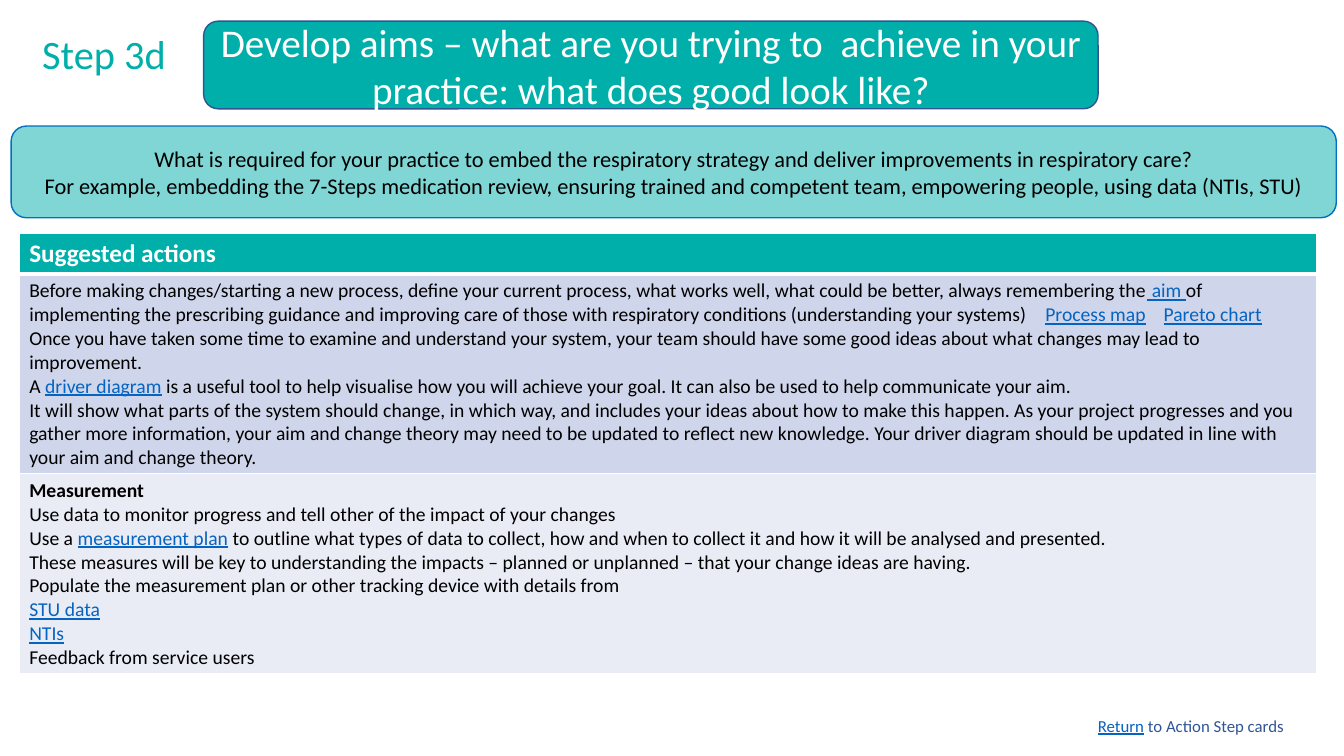
from lxml import etree
from pptx import Presentation
from pptx import util as u
from pptx.dml.color import RGBColor
from pptx.enum import shapes, text
from pptx.oxml.ns import qn

TEAL = RGBColor(0x00, 0xAF, 0xAA)
NAVY = RGBColor(0x32, 0x54, 0x91)
BLUE = RGBColor(0x00, 0x70, 0xC0)
LINK = RGBColor(0x05, 0x63, 0xC1)
INDIGO = RGBColor(0x2F, 0x55, 0x97)
LILAC = RGBColor(0xCF, 0xD5, 0xEA)
MIST = RGBColor(0xE9, 0xEB, 0xF5)
WHITE = RGBColor(0xFF, 0xFF, 0xFF)
BLACK = RGBColor(0x00, 0x00, 0x00)

CHANGES = [
    "Before making changes/starting a new process, define your current process, what works well, "
    "what could be better, always remembering the| aim |of implementing the prescribing guidance and "
    "improving care of those with respiratory conditions (understanding your systems)\t|Process map|\t|"
    "Pareto chart",
    "Once you have taken some time to examine and understand your system, your team should have some "
    "good ideas about what changes may lead to improvement.",
    "A |driver diagram| is a useful tool to help visualise how you will achieve your goal. "
    "It can also be used to help communicate your aim.",
    "It will show what parts of the system should change, in which way, and includes your ideas about "
    "how to make this happen. As your project progresses and you gather more information, your aim and "
    "change theory may need to be updated to reflect new knowledge. Your driver diagram should be "
    "updated in line with your aim and change theory.",
]
MEASUREMENT = [
    "Measurement",
    "Use data to monitor progress and tell other of the impact of your changes",
    "Use a |measurement plan| to outline what types of data to collect, how and when to collect it "
    "and how it will be analysed and presented.",
    "These measures will be key to understanding the impacts – planned or unplanned – that your "
    "change ideas are having.",
    "Populate the measurement plan or other tracking device with details from",
    "|STU data|",
    "|NTIs|",
    "Feedback from service users",
]


class Card:
    """Draws one action card on a grid of 100 columns by 100 rows; text between bars is a link."""

    font = "Calibri"

    def __init__(self, prs):
        self.col, self.row = prs.slide_width / 100, prs.slide_height / 100
        self.s = prs.slides.add_slide(prs.slide_layouts[6])

    def place(self, x, y, w, h):
        return [u.Emu(round(v)) for v in (x * self.col, y * self.row, w * self.col, h * self.row)]

    def fill_text(self, tf, lines, size, color, align=text.PP_ALIGN.LEFT, bold_first=False):
        tf.word_wrap = True
        for i, line in enumerate(lines):
            p = tf.paragraphs[0] if i == 0 else tf.add_paragraph()
            p.alignment = align
            for j, part in enumerate(line.split("|")):
                if not part:
                    continue
                r = p.add_run()
                r.text = part
                f = r.font
                f.name, f.size = self.font, u.Pt(size)
                f.bold = bold_first and i == 0
                f.underline = j % 2 == 1
                f.color.rgb = LINK if j % 2 else color

    def label(self, box, line, size, color, anchor=text.MSO_ANCHOR.TOP, spacing=1.0):
        tf = self.s.shapes.add_textbox(*self.place(*box)).text_frame
        tf.vertical_anchor = anchor
        self.fill_text(tf, [line], size, color)
        tf.paragraphs[0].line_spacing = spacing

    def panel(self, box, lines, size, color, border, opacity=100):
        sp = self.s.shapes.add_shape(shapes.MSO_SHAPE.ROUNDED_RECTANGLE, *self.place(*box))
        sp.shadow.inherit = False
        sp.fill.solid()
        sp.fill.fore_color.rgb = TEAL
        if opacity < 100:
            clr = sp._element.spPr.find(qn("a:solidFill"))[0]
            etree.SubElement(clr, qn("a:alpha"), val=str(opacity * 1000))
        sp.line.color.rgb, sp.line.width = border, u.Pt(1)
        sp.text_frame.vertical_anchor = text.MSO_ANCHOR.MIDDLE
        self.fill_text(sp.text_frame, lines, size, color, text.PP_ALIGN.CENTER)

    def borders(self, cell, bottom):
        tc_pr = cell._tc.get_or_add_tcPr()
        for i, (side, width) in enumerate(zip("LRTB", (1, 1, 1, bottom))):
            ln = etree.Element(qn(f"a:ln{side}"), w=str(u.Pt(width)))
            fill = etree.SubElement(ln, qn("a:solidFill"))
            etree.SubElement(fill, qn("a:srgbClr"), val=str(WHITE))
            tc_pr.insert(i, ln)

    def table(self, box, rows):
        tbl = self.s.shapes.add_table(len(rows), 1, *self.place(*box)).table
        for i, (height, fill, lines, size, color, bottom) in enumerate(rows):
            tbl.rows[i].height = round(height * self.row)
            cell = tbl.cell(i, 0)
            cell.fill.solid()
            cell.fill.fore_color.rgb = fill
            self.borders(cell, bottom)
            self.fill_text(cell.text_frame, lines, size, color, bold_first=lines is not CHANGES)
        return tbl

    def tabs(self, p, *stops):
        tab_lst = etree.SubElement(p._p.get_or_add_pPr(), qn("a:tabLst"))
        for stop in stops:
            etree.SubElement(tab_lst, qn("a:tab"), pos=str(round(stop * self.col)), algn="l")


def main():
    prs = Presentation()
    prs.slide_width, prs.slide_height = u.Inches(13.33), u.Inches(7.5)
    card = Card(prs)
    card.label((2.4, 2.8, 11.55, 9.2), "Step 3d", 28.8, TEAL, text.MSO_ANCHOR.MIDDLE, 0.9)
    card.panel((15.15, 2.8, 66.55, 11.6),
               ["Develop aims – what are you trying to  achieve in your practice: what does good look like?"],
               28, WHITE, NAVY)
    card.panel((0.83, 16.67, 98.6, 12.13),
               ["What is required for your practice to embed the respiratory strategy and deliver "
                "improvements in respiratory care?",
                "For example, embedding the 7-Steps medication review, ensuring trained and competent "
                "team, empowering people, using data (NTIs, STU)"],
               16, BLACK, BLUE, opacity=50)
    tbl = card.table((1.43, 30.93, 96.5, 57.7), [
        (4.93, TEAL, ["Suggested actions"], 18, WHITE, 3),
        (26.4, LILAC, CHANGES, 14, BLACK, 1),
        (26.4, MIST, MEASUREMENT, 14, BLACK, 1),
    ])
    card.tabs(tbl.cell(1, 0).text_frame.paragraphs[0], 75.6, 84.4)
    card.label((80.95, 94, 17.6, 4), "|Return| to Action Step cards", 12, INDIGO)
    prs.save("out.pptx")


if __name__ == "__main__":
    main()
